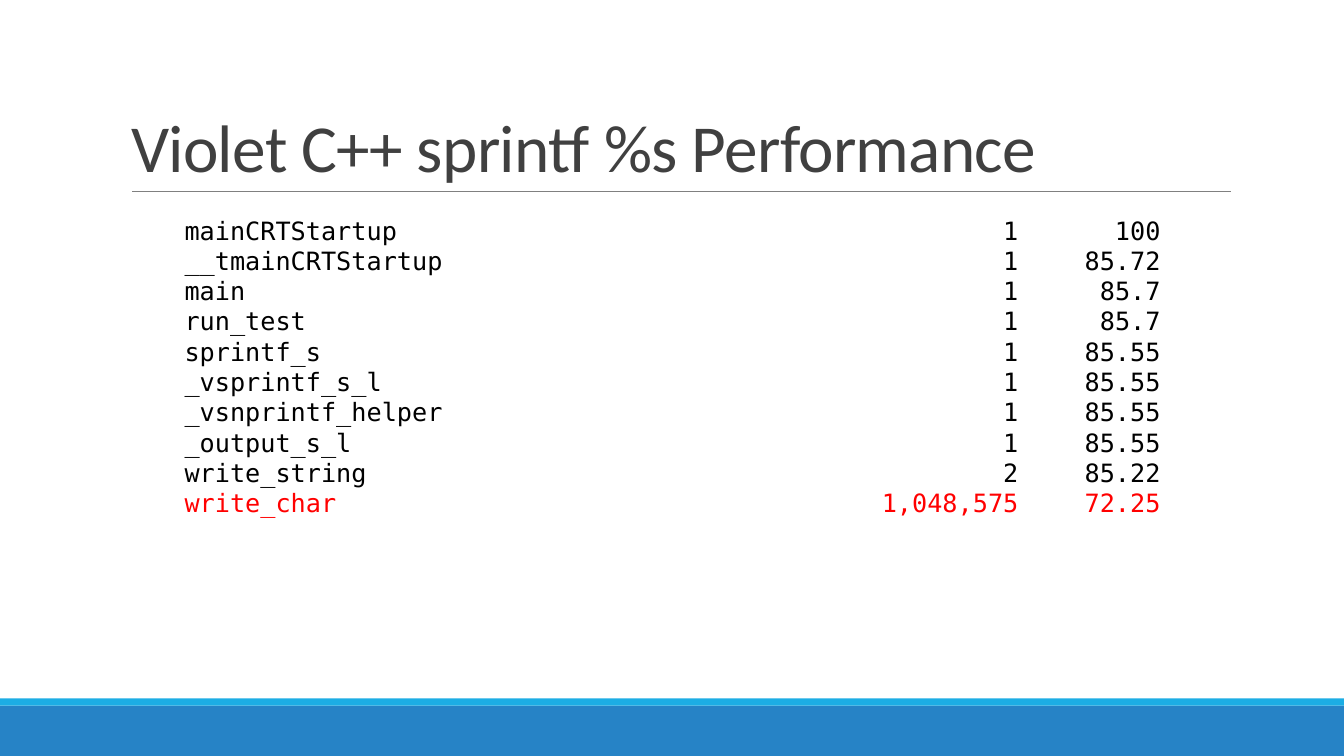
from pptx import Presentation
from pptx import util as u
from pptx.dml.color import RGBColor
from pptx.enum import shapes, text
from pptx.oxml.ns import qn
from lxml import etree

BLUE = RGBColor(0x26, 0x83, 0xC6)
CYAN = RGBColor(0x1C, 0xAD, 0xE4)
GRAY = RGBColor(0x80, 0x80, 0x80)
DARK = RGBColor(0x40, 0x40, 0x40)
BLACK = RGBColor(0, 0, 0)
RED = RGBColor(0xFF, 0, 0)

WIDE, HIGH = 13.33, 7.5
COLS = (5.66, 2.63, 1.41)
STEP = 0.3
PLAIN = "{2D5ABB26-0587-4C30-8999-92F81FD0307C}"
CALLS = (
    ("mainCRTStartup", "1", "100"),
    ("__tmainCRTStartup", "1", "85.72"),
    ("main", "1", "85.7"),
    ("run_test", "1", "85.7"),
    ("sprintf_s", "1", "85.55"),
    ("_vsprintf_s_l", "1", "85.55"),
    ("_vsnprintf_helper", "1", "85.55"),
    ("_output_s_l", "1", "85.55"),
    ("write_string", "2", "85.22"),
    ("write_char", "1,048,575", "72.25"),
)


def write(para, words, font, size, color):
    run = para.add_run()
    run.text = words
    run.font.name = font
    run.font.size = u.Pt(size)
    run.font.bold = False
    run.font.color.rgb = color
    return run


def add_bar(slide, left, top, width, height, color):
    bar = slide.shapes.add_shape(
        shapes.MSO_SHAPE.RECTANGLE,
        *map(u.Inches, (left, top, width, height)))
    bar.shadow.inherit = False
    bar.fill.solid()
    bar.fill.fore_color.rgb = color
    bar.line.fill.background()


def add_foot(slide, left, top, width, height):
    strip = 0.07
    add_bar(slide, left, top + strip, width, height - strip, BLUE)
    add_bar(slide, left, top, width, strip, CYAN)


def add_title(slide, left, top, width, height):
    base = u.Inches(top + height)
    start = left + 0.11
    rule = slide.shapes.add_connector(
        shapes.MSO_CONNECTOR.STRAIGHT,
        u.Inches(start), base, u.Inches(start + 10.9), base)
    rule.line.color.rgb = GRAY
    rule.line.width = u.Pt(0.5)
    etree.SubElement(rule._element.spPr, qn("a:effectLst"))

    title = slide.shapes.title
    title.left, title.top, title.width, title.height = map(
        u.Inches, (left, top, width, height))
    frame = title.text_frame
    frame.word_wrap = True
    frame.auto_size = text.MSO_AUTO_SIZE.NONE
    frame.vertical_anchor = text.MSO_ANCHOR.BOTTOM
    para = frame.paragraphs[0]
    para.alignment = text.PP_ALIGN.LEFT
    para.line_spacing = 0.85
    run = write(para, "Violet C++ sprintf %s Performance", "Calibri", 48, DARK)
    run.font._element.set("spc", "-50")


def fill_cell(cell, words, align, color):
    cell.fill.background()
    cell.margin_left = cell.margin_right = cell.margin_top = u.Inches(0.01)
    cell.margin_bottom = 0
    cell.vertical_anchor = text.MSO_ANCHOR.BOTTOM
    para = cell.text_frame.paragraphs[0]
    para.alignment = align
    write(para, words, "DejaVu Sans Mono", 18, color)


def add_calls(slide, left, top):
    frame = slide.shapes.add_table(
        len(CALLS), len(COLS), u.Inches(left), u.Inches(top),
        u.Inches(sum(COLS)), u.Inches(STEP * len(CALLS)))
    grid = frame.table
    grid.first_row = grid.horz_banding = False
    style = next(frame._element.iter(qn("a:tableStyleId")))
    style.text = PLAIN
    for col, width in zip(grid.columns, COLS):
        col.width = u.Inches(width)
    for i, call in enumerate(CALLS):
        color = RED if call[0] == "write_char" else BLACK
        for j, words in enumerate(call):
            align = text.PP_ALIGN.RIGHT if j else text.PP_ALIGN.LEFT
            fill_cell(grid.cell(i, j), words, align, color)


def main():
    deck = Presentation()
    deck.slide_width = u.Inches(WIDE)
    deck.slide_height = u.Inches(HIGH)
    slide = deck.slides.add_slide(deck.slide_layouts[5])
    add_foot(slide, 0, 6.93, WIDE, 0.57)
    add_title(slide, 1.2, 0.31, 11, 1.59)
    add_calls(slide, 1.82, 2.14)
    deck.save("out.pptx")


if __name__ == "__main__":
    main()
